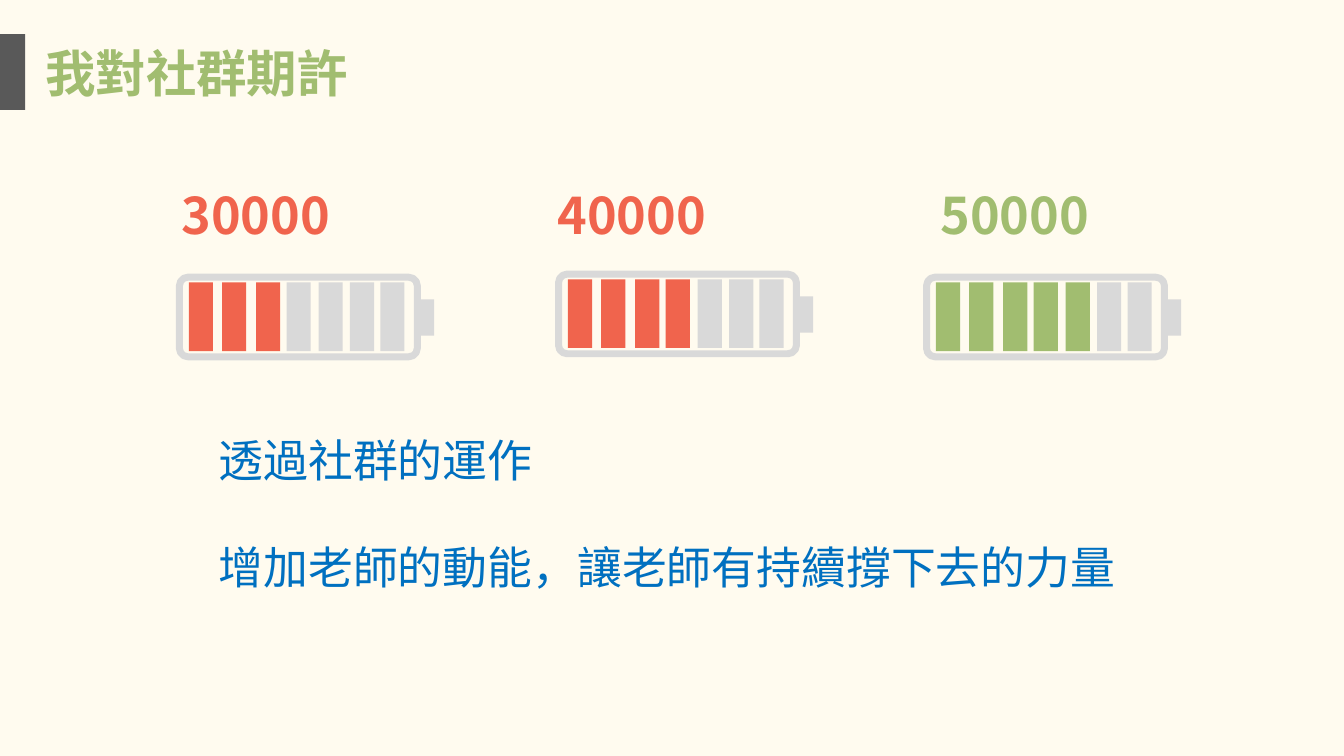
"""Build a slide of three batteries that show what is hoped of a community."""
import pptx
import pptx.dml.color
import pptx.enum.shapes
import pptx.enum.text
import pptx.oxml.ns
import pptx.util

WIDTH, HEIGHT = 13.33, 7.5
FONT = "Noto Sans CJK SC"
CREAM, GREY, DARK = "FFFBEF", "D9D9D9", "595959"
RED, GREEN, BLUE = "F0644D", "A1BD70", "0070C0"
CELL_OFFSETS = (0.7, 3.17, 5.7, 7.97, 10.35, 12.69, 14.95)
BATTERIES = (
    ("30000", 12.75, 13.35, 36.67, 3, RED),
    ("40000", 40.74, 41.56, 36.27, 4, RED),
    ("50000", 69.24, 68.94, 36.67, 5, GREEN),
)


def rgb(value):
    """Return a colour from a hex string."""
    return pptx.dml.color.RGBColor.from_string(value)


def place(x, y, w, h):
    """Turn percentages of the slide's size into lengths."""
    inch = pptx.util.Inches
    return (inch(x * WIDTH / 100), inch(y * HEIGHT / 100),
            inch(w * WIDTH / 100), inch(h * HEIGHT / 100))


def add_block(shapes, box, fill):
    """Add a plain filled rectangle."""
    sp = shapes.add_shape(pptx.enum.shapes.MSO_SHAPE.RECTANGLE, *place(*box))
    sp.shadow.inherit = False
    sp.fill.solid()
    sp.fill.fore_color.rgb = rgb(fill)
    sp.line.fill.background()


def add_case(shapes, box):
    """Add the rounded outline of a battery."""
    sp = shapes.add_shape(pptx.enum.shapes.MSO_SHAPE.ROUNDED_RECTANGLE, *place(*box))
    sp.adjustments[0] = 0.107
    sp.shadow.inherit = False
    sp.fill.background()
    sp.line.color.rgb = rgb(GREY)
    sp.line.width = pptx.util.Pt(5)


def add_text(s, box, *lines, size=36, color=GREEN, bold=False, wrap=False, gap=0):
    """Add a text box with one paragraph for each line."""
    tf = s.shapes.add_textbox(*place(*box)).text_frame
    tf.word_wrap = wrap
    tf.auto_size = pptx.enum.text.MSO_AUTO_SIZE.SHAPE_TO_FIT_TEXT
    for i, line in enumerate(lines):
        p = tf.paragraphs[0] if i == 0 else tf.add_paragraph()
        p.space_before = pptx.util.Pt(gap if i else 0)
        r = p.add_run()
        r.text = line
        r.font.size = pptx.util.Pt(size)
        r.font.bold = bold
        r.font.name = FONT
        r.font.color.rgb = rgb(color)
        ea = r.font._element.makeelement(pptx.oxml.ns.qn("a:ea"), {"typeface": FONT})
        r.font._element.append(ea)


def add_battery(s, x, y, charged, color):
    """Add a battery with its first cells charged."""
    shapes = s.shapes.add_group_shape().shapes
    add_case(shapes, (x, y, 17.7, 10.53))
    add_block(shapes, (x + 17.75, y + 2.93, 1.2, 4.8), GREY)
    for i, offset in enumerate(CELL_OFFSETS):
        add_block(shapes, (x + offset, y + 0.7, 1.8, 9.07), color if i < charged else GREY)


def main():
    """Build and save the slide."""
    prs = pptx.Presentation()
    prs.slide_width = pptx.util.Inches(WIDTH)
    prs.slide_height = pptx.util.Inches(HEIGHT)
    s = prs.slides.add_slide(prs.slide_layouts[6])
    s.background.fill.solid()
    s.background.fill.fore_color.rgb = rgb(CREAM)
    add_block(s.shapes, (0, 4.53, 1.88, 10), DARK)
    add_text(s, (2.63, 4.93, 24.23, 9.47), "我對社群期許", bold=True)
    for label, label_x, x, y, charged, color in BATTERIES:
        add_battery(s, x, y, charged, color)
        add_text(s, (label_x, 23.73, 13.2, 9.47), label, color=color, bold=True)
    add_text(s, (15.53, 56.53, 72.77, 22.93), "透過社群的運作",
             "增加老師的動能，讓老師有持續撐下去的力量",
             size=32, color=BLUE, wrap=True, gap=38)
    prs.save("out.pptx")


if __name__ == "__main__":
    main()
